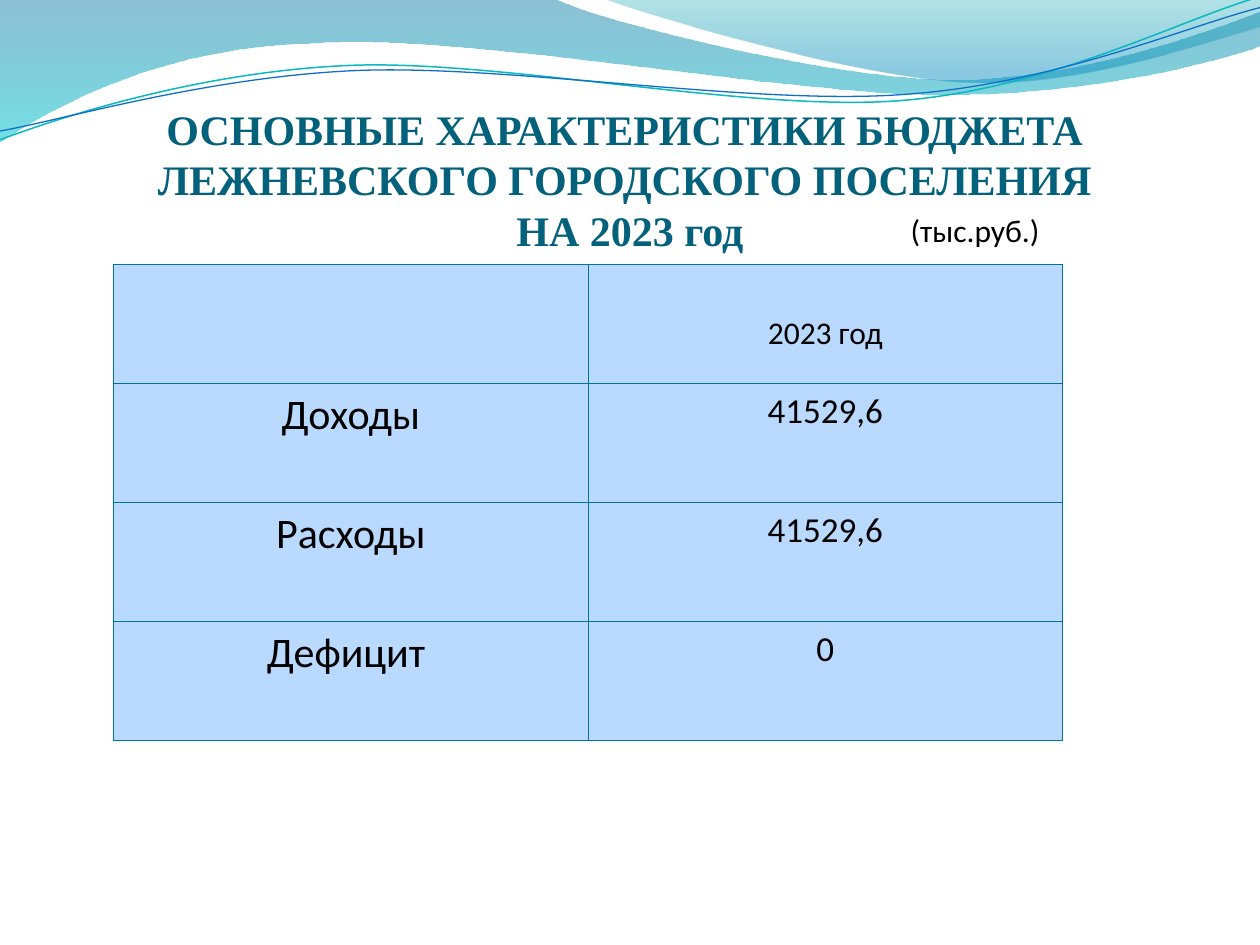
from math import cos, radians, sin

from lxml import etree
from pptx import Presentation
from pptx.dml.color import RGBColor
from pptx.enum.text import MSO_ANCHOR, PP_ALIGN
from pptx.oxml.ns import qn
from pptx.util import Cm, Pt

CENTER = PP_ALIGN.CENTER
LEFT = PP_ALIGN.LEFT
BOTTOM = MSO_ANCHOR.BOTTOM
INCH = 2.54
COLORS = {
    "title": "04617B", "text": "000000", "cell": "B9DAFE", "border": "0074A1",
    "blue": "0074A1", "aqua": "00C6CF", "teal": "00A1A9", "sky": "008BBF",
    "cyan": "0AB8BF", "navy": "0F6FC6",
}


def rgb(name):
    return RGBColor.from_string(COLORS[name])


def pairs(part):
    return list(zip(part[::2], part[1::2]))


class Deck:
    font = "Calibri"
    serif = "Times New Roman"

    def __init__(self):
        self.file = Presentation()
        self.file.slide_width, self.file.slide_height = Cm(25.4), Cm(19.05)
        self.slide = self.file.slides.add_slide(self.file.slide_layouts[5])

    def run(self, para, text, size, color="text", font=None, bold=False):
        run = para.add_run()
        run.text = text
        run.font.size = Pt(size)
        run.font.name = font or self.font
        run.font.bold = bold
        run.font.color.rgb = rgb(color)

    def outline(self, parts, box, close, turn=0):
        left, top, width, height = box
        midx, midy = left + width / 2, top + height / 2
        c, s = cos(radians(turn)), sin(radians(turn))

        def place(x, y):
            x, y = x - midx, y - midy
            return (Cm((x * c + y * s + width / 2) * INCH),
                    Cm((y * c - x * s + height / 2) * INCH))

        spots = [[place(*pair) for pair in pairs(part)] for part in parts]
        pen = self.slide.shapes.build_freeform(*spots[0][0])
        pen.add_line_segments([spot[-1] for spot in spots[1:]], close=close)
        shape = pen.convert_to_shape()
        shape.shadow.inherit = False
        shape.left, shape.top, shape.width, shape.height = (
            Cm(side * INCH) for side in box)
        shape.rotation = turn
        trace = shape._element.spPr.find(".//" + qn("a:path"))
        trace.set("w", str(shape.width))
        trace.set("h", str(shape.height))
        for node, spot in zip(list(trace), spots):
            if len(spot) == 3:
                bend = etree.Element(qn("a:cubicBezTo"))
                trace.replace(node, bend)
                node = bend
            for old in list(node):
                node.remove(old)
            for x, y in spot:
                etree.SubElement(node, qn("a:pt"), x=str(int(x)), y=str(int(y)))
        return shape

    def wave(self, parts, box, stops):
        shape = self.outline(parts, box, True)
        shape.line.fill.background()
        shape.fill.gradient()
        shape.fill.gradient_angle = 270
        for stop, (place, color, _) in zip(shape.fill.gradient_stops, stops):
            stop.position = place
            stop.color.rgb = rgb(color)
        tones = shape._element.spPr.iter(qn("a:srgbClr"))
        for tone, (_, _, alpha) in zip(tones, stops):
            etree.SubElement(tone, qn("a:alpha"), val=str(alpha * 1000))

    def line(self, parts, box, color, width):
        shape = self.outline(parts, box, False, 357.3)
        shape.fill.background()
        shape.line.color.rgb = rgb(color)
        shape.line.width = Pt(width)

    def title(self, lines, box, size):
        shape = self.slide.shapes.title
        shape.left, shape.top, shape.width, shape.height = map(Cm, box)
        self.slide.shapes._spTree.append(shape._element)
        frame = shape.text_frame
        frame.word_wrap = True
        frame.vertical_anchor = BOTTOM
        frame.margin_left = frame.margin_right = frame.margin_bottom = 0
        para = frame.paragraphs[0]
        para.alignment = CENTER
        for row, text in enumerate(lines):
            if row:
                para.add_line_break()
            self.run(para, text, size, "title", self.serif, True)
        for gap in para._p.findall(qn("a:br")):
            etree.SubElement(gap, qn("a:rPr"), sz=str(size * 100))

    def label(self, text, box, size):
        frame = self.slide.shapes.add_textbox(*map(Cm, box)).text_frame
        frame.word_wrap = True
        frame.paragraphs[0].alignment = LEFT
        self.run(frame.paragraphs[0], text, size)

    def border(self, cell, width):
        props = cell._tc.get_or_add_tcPr()
        for place, side in enumerate(("lnL", "lnR", "lnT", "lnB")):
            edge = etree.Element(qn("a:" + side), w=str(Pt(width)))
            fill = etree.SubElement(edge, qn("a:solidFill"))
            etree.SubElement(fill, qn("a:srgbClr"), val=COLORS["border"])
            props.insert(place, edge)

    def table(self, rows, box):
        shape = self.slide.shapes.add_table(len(rows), len(rows[0]), *map(Cm, box))
        grid = shape.table
        grid.first_row = grid.horz_banding = False
        for r, row in enumerate(rows):
            for c, (text, size) in enumerate(row):
                cell = grid.cell(r, c)
                cell.fill.solid()
                cell.fill.fore_color.rgb = rgb("cell")
                self.border(cell, 0.75)
                para = cell.text_frame.paragraphs[0]
                para.alignment = CENTER
                if text:
                    self.run(para, text, size)
        return grid


def main():
    deck = Deck()
    deck.wave([(0, 0), (4.4, -0.01), (4.76, 0.17, 6.64, 0.63, 7.58, 0.63),
               (8.53, 0.63, 9.58, 0.26, 10, 0.09), (10.01, 0.36),
               (9.83, 0.44, 8.7, 0.76, 7.46, 0.75),
               (6.22, 0.75, 3.82, 0.28, 2.57, 0.34),
               (1.29, 0.36, 0.46, 0.83, -0.01, 1.13), (0, 0)],
              (-0.01, -0.01, 10.02, 1.14), [(0, "blue", 45), (1, "aqua", 55)])
    deck.wave([(4.79, -0.01), (5.09, 0.11, 6.82, 0.62, 7.69, 0.65),
               (8.56, 0.69, 9.61, 0.32, 10, 0.21), (10, 0), (4.79, -0.01)],
              (4.79, -0.01, 5.21, 0.7), [(0, "teal", 30), (0.8, "sky", 45)])
    deck.line([(0, 1.11), (0.48, 0.93, 1.58, 0.57, 2.77, 0.52),
               (3.95, 0.47, 5.93, 0.89, 7.13, 0.8),
               (8.33, 0.71, 9.38, 0.15, 9.98, -0.02)],
              (-0.02, 0.22, 10.02, 0.71), "cyan", 0.85)
    deck.line([(0, 1.04), (0.47, 0.96, 1.64, 0.61, 2.83, 0.56),
               (4.03, 0.51, 5.97, 0.84, 7.17, 0.75),
               (8.36, 0.67, 9.41, 0.21, 10, 0.06)],
              (-0.02, 0.3, 10.03, 0.58), "navy", 0.75)

    deck.title(["ОСНОВНЫЕ ХАРАКТЕРИСТИКИ БЮДЖЕТА ",
                "ЛЕЖНЕВСКОГО ГОРОДСКОГО ПОСЕЛЕНИЯ ",
                "НА 2023 год"], (1.27, 1.95, 22.86, 3.18), 24)
    sums = [("Доходы", "41529,6"), ("Расходы", "41529,6"), ("Дефицит ", "0")]
    rows = [[("", 18), ("2023 год", 18)]]
    rows += [[(name, 24), (value, 20)] for name, value in sums]
    grid = deck.table(rows, (2.29, 5.33, 19.13, 9.6))
    grid.cell(0, 1).margin_top = Cm(1)
    deck.label("(тыс.руб.)", (18.11, 4.13, 4.6, 1.02), 18)
    deck.file.save("out.pptx")


if __name__ == "__main__":
    main()
